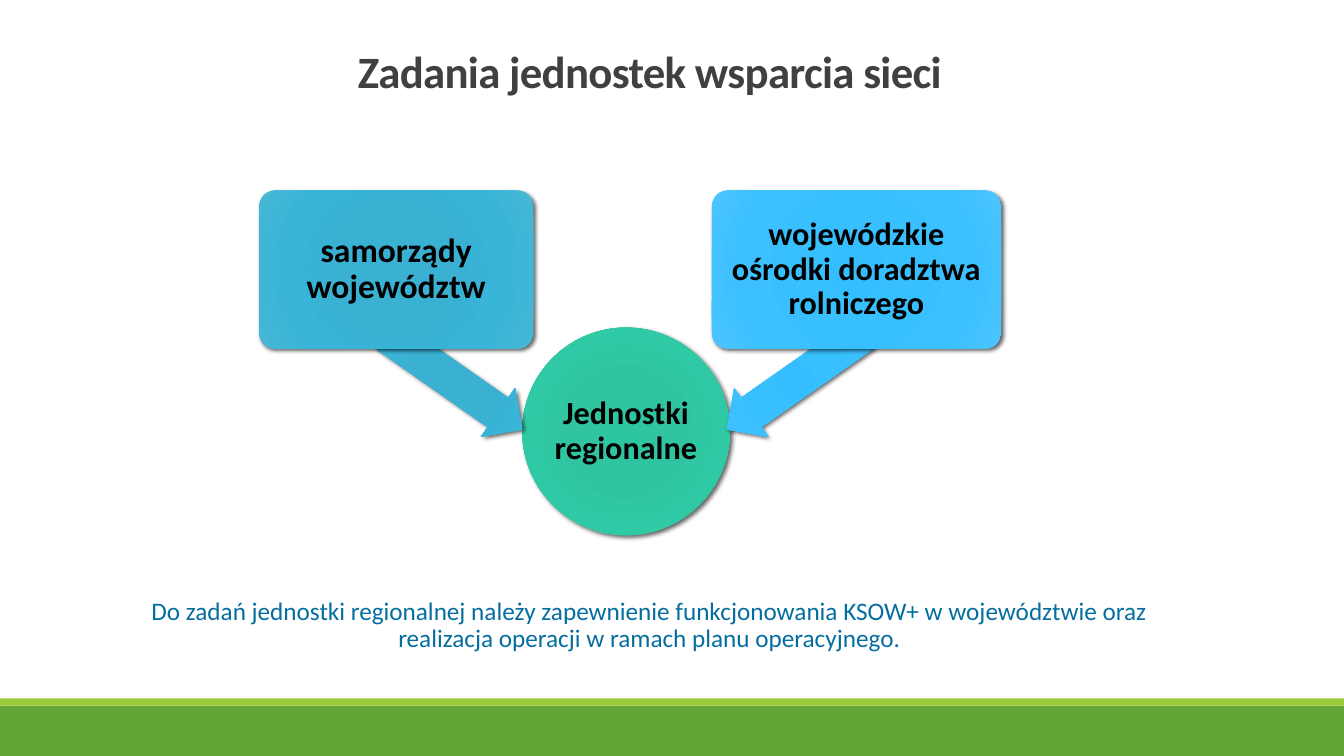
from lxml.etree import SubElement
from pptx import Presentation
from pptx.dml.color import RGBColor
from pptx.enum.shapes import MSO_SHAPE as Shape
from pptx.enum.text import MSO_ANCHOR as Anchor, PP_ALIGN as Align
from pptx.oxml import parse_xml
from pptx.oxml.ns import nsdecls, qn
from pptx.util import Inches, Pt

FONT = "Calibri"
BLACK = RGBColor(0x00, 0x00, 0x00)
TITLE_GRAY = RGBColor(0x40, 0x40, 0x40)
BODY_BLUE = RGBColor(0x05, 0x6E, 0xA0)
BAND_GREEN = RGBColor(0x63, 0xA5, 0x37)
STRIPE_GREEN = RGBColor(0x99, 0xCB, 0x38)


def shades(*codes):
    """Return the colours of a gradient from its hex codes."""
    return [RGBColor.from_string(code) for code in codes]


GREEN = shades("2EC5A1", "31C4A1", "2FCAA5", "3EC7A6")
TEAL = shades("37B1D3", "3AB1D2", "38B5D8", "48B7D5")
SKY = shades("34BEFF", "38BFFE", "3CC0FF", "4BC5FF")
STOPS = (0, 34, 70, 100)


def write(shape, text, size, color, bold=False, margin=0.05, spacing=0.9, anchor=Anchor.MIDDLE):
    """Put one centred paragraph into a shape and return its run."""
    frame = shape.text_frame
    frame.text = text
    frame.word_wrap = True
    frame.vertical_anchor = anchor
    frame.margin_left = frame.margin_right = Inches(margin)
    frame.margin_top = frame.margin_bottom = Inches(margin)
    para = frame.paragraphs[0]
    para.alignment = Align.CENTER
    para.line_spacing = spacing
    span = para.runs[0]
    span.font.name = FONT
    span.font.size = Pt(size)
    span.font.bold = bold
    span.font.color.rgb = color
    return span


def add_glossy(slide, kind, box, colors, adjustments=()):
    """Add a preset shape with a radial gradient and a soft shadow."""
    shape = slide.shapes.add_shape(kind, *map(Inches, box))
    for index, value in enumerate(adjustments):
        shape.adjustments[index] = value
    shape.line.fill.background()
    shape.shadow.inherit = False
    stops = "".join(
        f'<a:gs pos="{stop * 1000}"><a:srgbClr val="{color}"/></a:gs>'
        for stop, color in zip(STOPS, colors)
    )
    gradient = parse_xml(
        f'<a:gradFill {nsdecls("a")} rotWithShape="1"><a:gsLst>{stops}</a:gsLst>'
        '<a:path path="circle"><a:fillToRect l="100000" t="100000" r="100000" b="100000"/>'
        "</a:path></a:gradFill>"
    )
    properties = shape.fill._xPr
    properties.find(qn("a:ln")).addprevious(gradient)
    shadow = SubElement(
        properties.find(qn("a:effectLst")), qn("a:outerShdw"),
        blurRad=str(Pt(3)), dist=str(Pt(2)), dir="2700000", rotWithShape="0",
    )
    black = SubElement(shadow, qn("a:srgbClr"), val=str(BLACK))
    SubElement(black, qn("a:alpha"), val="60000")
    return shape


def add_footer(slide, left, top, width, height):
    """Draw the green band with a lighter stripe on top of it."""
    stripe = 0.07
    for y, depth, color in ((top + stripe, height - stripe, BAND_GREEN), (top, stripe, STRIPE_GREEN)):
        band = slide.shapes.add_shape(Shape.RECTANGLE, *map(Inches, (left, y, width, depth)))
        band.shadow.inherit = False
        band.fill.solid()
        band.fill.fore_color.rgb = color
        band.line.fill.background()


def add_title(slide, *box):
    """Write the slide title at the bottom of its box."""
    title = slide.shapes.add_textbox(*map(Inches, box))
    span = write(title, "Zadania jednostek wsparcia sieci", 32, TITLE_GRAY, True,
                 spacing=0.85, anchor=Anchor.BOTTOM)
    span.font._element.set("spc", "-50")


def add_diagram(slide, left, top, width, height):
    """Draw two bodies pointing at the regional units circle."""
    diameter, box_height = 2.06, 1.57
    circle = add_glossy(
        slide, Shape.OVAL,
        (left + 2.61, top + height - diameter, diameter, diameter), GREEN)
    write(circle, "Jednostki regionalne", 23, BLACK, True, margin=0.02)
    bodies = (
        ("samorządy województw", 24, TEAL, 0, 2.72, 1.1, 215),
        ("wojewódzkie ośrodki doradztwa rolniczego", 23, SKY, width - 2.87, 2.87, 4.49, 325),
    )
    for text, size, colors, offset, box_width, arrow_offset, angle in bodies:
        arrow = add_glossy(slide, Shape.LEFT_ARROW,
                           (left + arrow_offset, top + 1.6, 1.66, 0.59), colors, (0.6, 0.5))
        arrow.rotation = angle
        body = add_glossy(slide, Shape.ROUNDED_RECTANGLE,
                          (left + offset, top, box_width, box_height), colors, (0.1,))
        write(body, text, size, BLACK, True)


def add_description(slide, *box):
    """Write the explanation below the diagram."""
    description = slide.shapes.add_textbox(*map(Inches, box))
    write(description,
          "Do zadań jednostki regionalnej należy zapewnienie funkcjonowania KSOW+ "
          "w województwie oraz realizacja operacji w ramach planu operacyjnego.",
          18, BODY_BLUE, anchor=Anchor.TOP)


def main():
    """Build the slide and save the deck."""
    deck = Presentation()
    deck.slide_width, deck.slide_height = Inches(13.33), Inches(7.5)
    slide = deck.slides.add_slide(deck.slide_layouts[6])
    add_footer(slide, 0, 6.93, 13.33, 0.57)
    add_title(slide, 2.38, 0.19, 8.13, 0.83)
    add_description(slide, 1.02, 5.89, 10.84, 0.7)
    add_diagram(slide, 2.57, 1.89, 7.36, 3.42)
    deck.save("out.pptx")


if __name__ == "__main__":
    main()
